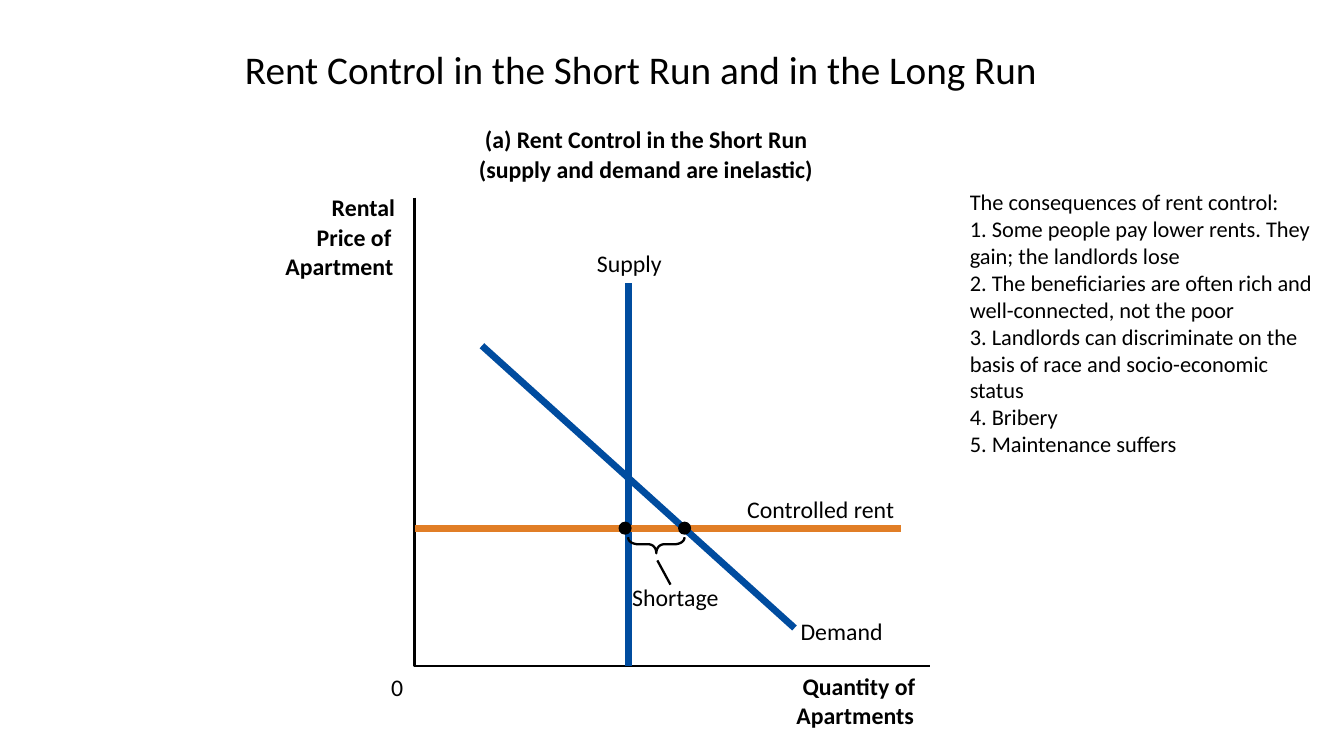
"""Build a slide on rent control with a supply and demand diagram."""
import dataclasses
import typing

import lxml.etree
import pptx
import pptx.dml.color
import pptx.enum.shapes
import pptx.enum.text
import pptx.oxml.ns
import pptx.util

Inches = pptx.util.Inches
Point = tuple[float, float]


@dataclasses.dataclass(frozen=True)
class Theme:
    """Colours, font and sizes of the slide."""
    font: str = "Calibri"
    ink: str = "000000"
    curve: str = "004C9F"
    rent: str = "E17E26"
    title_size: float = 28
    label_size: float = 17
    list_size: float = 16
    thin: float = 1.63
    thick: float = 4.88


class Label(typing.NamedTuple):
    """A one-line diagram label."""
    text: str
    left: float
    top: float
    width: float
    bold: bool = False


class Stroke(typing.NamedTuple):
    """A straight diagram line."""
    start: Point
    end: Point
    color: str
    weight: float


THEME = Theme()
LABEL_HEIGHT = 0.29
ORIGIN = (4.11, 6.61)
SUPPLY_X = 6.23
RENT_Y = 5.24
DOT_SIZE = 0.13
DOT_CENTERS = (6.2, 6.79)
BRACE_CENTER = 6.51

LABELS = (
    Label("(a) Rent Control in the Short Run", 4.81, 1.24, 3.22, True),
    Label("(supply and demand are inelastic)", 4.75, 1.53, 3.33, True),
    Label("Rental", 3.29, 1.91, 0.63, True),
    Label("Price of", 3.14, 2.21, 0.75, True),
    Label("Apartment", 2.83, 2.5, 1.08, True),
    Label("Quantity of", 7.96, 6.66, 1.13, True),
    Label("Apartments", 7.9, 6.95, 1.17, True),
    Label("0", 3.88, 6.67, 0.12),
    Label("Supply", 5.92, 2.47, 0.65),
    Label("Controlled rent", 7.41, 4.91, 1.47),
    Label("Demand", 7.94, 6.12, 0.82),
    Label("Shortage", 6.27, 5.78, 0.86),
)
STROKES = (
    Stroke((SUPPLY_X, ORIGIN[1]), (SUPPLY_X, 2.81), THEME.curve, THEME.thick),
    Stroke((4.12, RENT_Y), (8.94, RENT_Y), THEME.rent, THEME.thick),
    Stroke((4.78, 3.43), (7.88, 6.23), THEME.curve, THEME.thick),
    Stroke((6.52, 5.56), (6.65, 5.8), THEME.ink, THEME.thin),
)
CONSEQUENCES = (
    "The consequences of rent control:",
    "1. Some people pay lower rents. They gain; the landlords lose",
    "2. The beneficiaries are often rich and well-connected, not the poor",
    "3. Landlords can discriminate on the basis of race and socio-economic status",
    "4. Bribery",
    "5. Maintenance suffers",
)


def rgb(color: str) -> pptx.dml.color.RGBColor:
    """Return a colour from its hex digits."""
    return pptx.dml.color.RGBColor.from_string(color)


def write(frame, text: str, *, size: float, bold: bool = False,
          spacing: float | None = None) -> None:
    """Fill a text frame, one paragraph a line."""
    frame.text = text
    for paragraph in frame.paragraphs:
        paragraph.alignment = pptx.enum.text.PP_ALIGN.LEFT
        paragraph.line_spacing = spacing
        for run in paragraph.runs:
            run.font.name = THEME.font
            run.font.size = pptx.util.Pt(size)
            run.font.bold = bold
            run.font.color.rgb = rgb(THEME.ink)


def add_title(slide, text: str) -> None:
    """Place and format the title placeholder."""
    title = slide.shapes.title
    title.left, title.top = Inches(2.33), Inches(0.38)
    title.width, title.height = Inches(8.84), Inches(0.7)
    frame = title.text_frame
    write(frame, text, size=THEME.title_size, spacing=0.8)
    frame.auto_size = pptx.enum.text.MSO_AUTO_SIZE.NONE
    frame.vertical_anchor = pptx.enum.text.MSO_ANCHOR.MIDDLE


def add_label(slide, label: Label) -> None:
    """Add an unwrapped label without margins."""
    box = slide.shapes.add_textbox(Inches(label.left), Inches(label.top),
                                   Inches(label.width), Inches(LABEL_HEIGHT))
    frame = box.text_frame
    frame.margin_left = frame.margin_right = 0
    frame.margin_top = frame.margin_bottom = 0
    frame.word_wrap = False
    frame.auto_size = pptx.enum.text.MSO_AUTO_SIZE.SHAPE_TO_FIT_TEXT
    write(frame, label.text, size=THEME.label_size, bold=label.bold)


def add_stroke(slide, stroke: Stroke) -> None:
    """Add a straight line without a shadow."""
    line = slide.shapes.add_connector(
        pptx.enum.shapes.MSO_CONNECTOR.STRAIGHT,
        *(Inches(value) for value in (*stroke.start, *stroke.end)))
    line.line.color.rgb = rgb(stroke.color)
    line.line.width = pptx.util.Pt(stroke.weight)
    properties = line.element.find(pptx.oxml.ns.qn("p:spPr"))
    lxml.etree.SubElement(properties, pptx.oxml.ns.qn("a:effectLst"))


def add_outline(slide, points: list[Point]) -> None:
    """Add an open, unfilled thin line through the points."""
    corners = [(Inches(x), Inches(y)) for x, y in points]
    builder = slide.shapes.build_freeform(*corners[0])
    builder.add_line_segments(corners[1:], close=False)
    outline = builder.convert_to_shape()
    outline.shadow.inherit = False
    outline.fill.background()
    outline.line.color.rgb = rgb(THEME.ink)
    outline.line.width = pptx.util.Pt(THEME.thin)


def bezier(controls: tuple[Point, ...], steps: int = 12) -> list[Point]:
    """Sample a cubic curve."""
    points = []
    for step in range(steps + 1):
        t = step / steps
        weights = ((1 - t) ** 3, 3 * t * (1 - t) ** 2, 3 * t * t * (1 - t), t ** 3)
        x, y = (sum(w * c[axis] for w, c in zip(weights, controls)) for axis in (0, 1))
        points.append((x, y))
    return points


def brace_points() -> list[Point]:
    """Return a symmetric brace that opens upwards."""
    half = (bezier(((0.28, 5.33), (0.28, 5.38), (0.22, 5.4), (0.18, 5.4)))
            + bezier(((0.08, 5.4), (0.03, 5.4), (0, 5.44), (0, 5.49))))
    right = [(BRACE_CENTER + x, y) for x, y in half]
    left = [(BRACE_CENTER - x, y) for x, y in reversed(half[:-1])]
    return right + left


def add_dot(slide, center: float) -> None:
    """Mark a point on the controlled rent line."""
    dot = slide.shapes.add_shape(
        pptx.enum.shapes.MSO_SHAPE.OVAL, Inches(center - DOT_SIZE / 2),
        Inches(RENT_Y - DOT_SIZE / 2), Inches(DOT_SIZE), Inches(DOT_SIZE))
    dot.shadow.inherit = False
    dot.fill.solid()
    dot.fill.fore_color.rgb = rgb(THEME.ink)
    dot.line.fill.background()


def add_consequences(slide) -> None:
    """Add the list beside the diagram."""
    box = slide.shapes.add_textbox(Inches(9.52), Inches(1.82), Inches(3.69), Inches(2.79))
    box.text_frame.word_wrap = True
    box.text_frame.auto_size = pptx.enum.text.MSO_AUTO_SIZE.SHAPE_TO_FIT_TEXT
    write(box.text_frame, "\n".join(CONSEQUENCES), size=THEME.list_size)


def main() -> None:
    """Build and save the slide."""
    deck = pptx.Presentation()
    deck.slide_width, deck.slide_height = Inches(13.33), Inches(7.5)
    slide = deck.slides.add_slide(deck.slide_layouts.get_by_name("Title Only"))
    add_title(slide, "Rent Control in the Short Run and in the Long Run")
    add_outline(slide, [(ORIGIN[0], 1.96), ORIGIN, (9.22, ORIGIN[1])])
    for stroke in STROKES:
        add_stroke(slide, stroke)
    add_outline(slide, brace_points())
    for center in DOT_CENTERS:
        add_dot(slide, center)
    for label in LABELS:
        add_label(slide, label)
    add_consequences(slide)
    deck.save("out.pptx")


if __name__ == "__main__":
    main()
